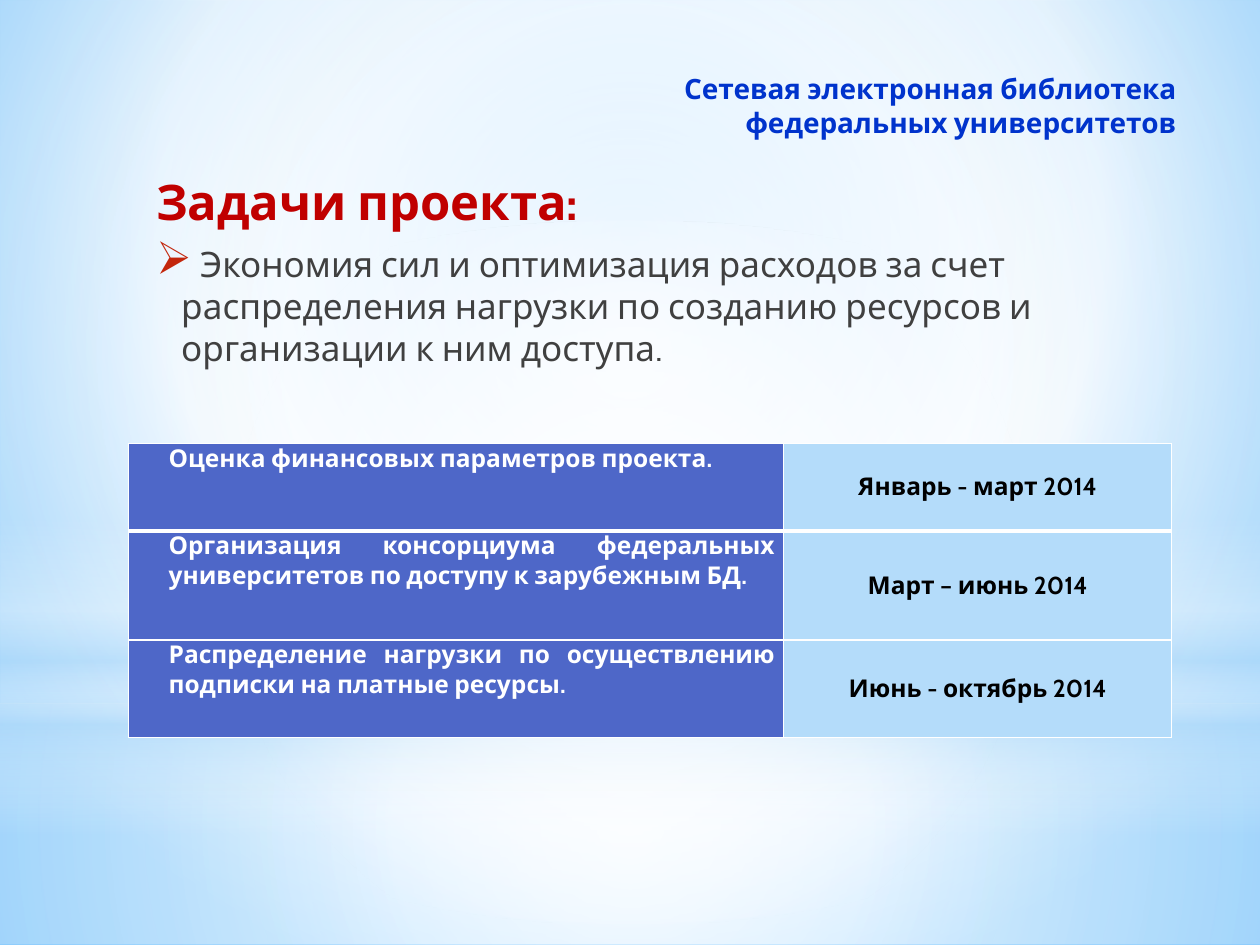
from dataclasses import dataclass, field
from typing import NamedTuple

from lxml.etree import SubElement
from pptx import Presentation
from pptx.dml.color import RGBColor
from pptx.enum.shapes import MSO_SHAPE as Shape
from pptx.enum.text import MSO_ANCHOR as Anchor, MSO_AUTO_SIZE as AutoSize, PP_ALIGN as Align
from pptx.oxml.ns import qn
from pptx.util import Pt


@dataclass(frozen=True)
class Theme:
    font: str = "Cabin"
    title: str = "0033CC"
    heading: str = "C00000"
    body: str = "404040"
    bullet: str = "C3260C"
    white: str = "FFFFFF"
    black: str = "000000"
    pale: str = "B4DCFA"
    task: str = "4E67C8"
    sky: str = "9ED5FF"
    deep_sky: str = "5BB9FF"
    title_size: int = 16
    heading_size: int = 28
    body_size: int = 20
    table_size: int = 14


THEME = Theme()


class Stop(NamedTuple):
    position: int
    color: str
    opacity: int = 100


@dataclass(frozen=True)
class Gradient:
    stops: list[Stop]
    focus: tuple = (50, 50, 50, 50)  # left, top, right, bottom
    angle: int | None = None


@dataclass(frozen=True)
class Panel:
    kind: Shape
    top: float
    height: float
    gradient: Gradient


@dataclass(frozen=True)
class TextStyle:
    size: int
    color: str
    bold: bool = True
    para: dict = field(default_factory=dict)
    indent: tuple = (0, 0)  # left margin, first line


class Stage(NamedTuple):
    task: str
    period: str
    height: float


WIDTH, HEIGHT = 720, 540
WHITE, PALE = THEME.white, THEME.pale

SKY = Gradient([Stop(0, THEME.sky), Stop(60, WHITE), Stop(100, THEME.deep_sky)], (20, 10, 20, 60))
PANELS = [
    Panel(Shape.RECTANGLE, 402, 138,
          Gradient([Stop(0, WHITE, 91), Stop(37, WHITE, 76), Stop(100, PALE, 79)])),
    Panel(Shape.RECTANGLE, 0, 402,
          Gradient([Stop(0, WHITE, 89), Stop(48, WHITE, 62), Stop(100, PALE, 79)])),
    Panel(Shape.RECTANGLE, 296.6, 180,
          Gradient([Stop(0, WHITE, 0), Stop(29, WHITE, 30), Stop(45, PALE, 40),
                    Stop(55, WHITE, 26), Stop(65, PALE, 60), Stop(100, WHITE, 0)], angle=90)),
    Panel(Shape.OVAL, 126, 402, Gradient([Stop(0, WHITE), Stop(56, WHITE, 0)])),
]

TITLE = TextStyle(THEME.title_size, THEME.title, para={"alignment": Align.RIGHT})
HEADING = TextStyle(THEME.heading_size, THEME.heading, indent=(3.6, 0),
                    para={"space_before": Pt(5.6), "space_after": Pt(3)})
GOAL = TextStyle(THEME.body_size, THEME.body, False, indent=(18, -14.4),
                 para={"space_before": Pt(4), "space_after": Pt(3)})
TASK = TextStyle(THEME.table_size, WHITE, para={"alignment": Align.JUSTIFY}, indent=(18, 0))
PERIOD = TextStyle(THEME.table_size, THEME.black, para={"alignment": Align.CENTER})

STAGES = [
    Stage("Оценка финансовых параметров проекта.", "Январь - март 2014", 50),
    Stage("Организация консорциума федеральных университетов по доступу к зарубежным БД.",
          "Март – июнь 2014", 62.5),
    Stage("Распределение нагрузки по осуществлению подписки на платные ресурсы.",
          "Июнь - октябрь 2014", 55.5),
]


def set_values(target, values: dict) -> None:
    for name, value in values.items():
        setattr(target, name, value)


def add_color(parent, color: str):
    return SubElement(parent, qn("a:srgbClr"), val=color)


def paint_gradient(owner, gradient: Gradient) -> None:
    """Fill a shape or a slide background with gradient stops."""
    owner.fill.gradient() if hasattr(owner, "fill") else owner.background.fill.gradient()
    element = next(owner.element.iter(qn("a:gradFill")))
    for child in list(element):
        element.remove(child)
    stop_list = SubElement(element, qn("a:gsLst"))
    for stop in gradient.stops:
        mark = SubElement(stop_list, qn("a:gs"), pos=str(stop.position * 1000))
        color = add_color(mark, stop.color)
        if stop.opacity < 100:
            SubElement(color, qn("a:alpha"), val=str(stop.opacity * 1000))
    if gradient.angle is not None:
        SubElement(element, qn("a:lin"), ang=str(gradient.angle * 60000), scaled="0")
    else:
        route = SubElement(element, qn("a:path"), path="circle")
        sides = {side: str(value * 1000) for side, value in zip("ltrb", gradient.focus)}
        SubElement(route, qn("a:fillToRect"), **sides)


def draw_panel(page, panel: Panel) -> None:
    shape = page.shapes.add_shape(panel.kind, 0, Pt(panel.top), Pt(WIDTH), Pt(panel.height))
    shape.shadow.inherit = False
    shape.line.fill.background()
    paint_gradient(shape, panel.gradient)


def write(para, text: str, style: TextStyle) -> None:
    para.text = text
    set_values(para, style.para)
    margin, first_line = style.indent
    properties = para._p.get_or_add_pPr()
    properties.set("marL", str(Pt(margin)))
    properties.set("indent", str(Pt(first_line)))
    for span in para.runs:
        set_values(span.font, {"name": THEME.font, "size": Pt(style.size), "bold": style.bold})
        span.font.color.rgb = RGBColor.from_string(style.color)


def add_bullet(para, symbol: str) -> None:
    properties = para._p.get_or_add_pPr()
    add_color(SubElement(properties, qn("a:buClr")), THEME.bullet)
    SubElement(properties, qn("a:buSzPct"), val="130000")
    SubElement(properties, qn("a:buChar"), char=symbol)


def draw_cell(cell, text: str, style: TextStyle, fill: str, anchor, borders: dict) -> None:
    set_values(cell, {"margin_left": Pt(5), "margin_right": Pt(5), "margin_top": 0,
                      "margin_bottom": 0, "vertical_anchor": anchor})
    write(cell.text_frame.paragraphs[0], text, style)
    properties = cell._tc.get_or_add_tcPr()
    for side, width in borders.items():
        line = SubElement(properties, qn(f"a:ln{side}"), w=str(Pt(width)))
        add_color(SubElement(line, qn("a:solidFill")), WHITE)
    cell.fill.solid()
    cell.fill.fore_color.rgb = RGBColor.from_string(fill)


def draw_schedule(page, stages: list[Stage]) -> None:
    widths = (374.4, 221.8)
    frame = page.shapes.add_table(len(stages), len(widths), Pt(73.4), Pt(253.4),
                                  Pt(sum(widths)), Pt(sum(stage.height for stage in stages)))
    table = frame.table
    set_values(table, {"first_row": False, "horz_banding": False})
    for column, width in zip(table.columns, widths):
        column.width = Pt(width)
    for index, stage in enumerate(stages):
        table.rows[index].height = Pt(stage.height)
        # A thick rule parts the first stage from the rest
        borders = {"L": 1, "R": 1, "T": 3 if index == 1 else 1, "B": 3 if index == 0 else 1}
        draw_cell(table.cell(index, 0), stage.task, TASK, THEME.task, Anchor.TOP, borders)
        draw_cell(table.cell(index, 1), stage.period, PERIOD, PALE, Anchor.MIDDLE, borders)


def main() -> None:
    deck = Presentation()
    set_values(deck, {"slide_width": Pt(WIDTH), "slide_height": Pt(HEIGHT)})
    page = deck.slides.add_slide(deck.slide_layouts[5])

    # Backdrop
    paint_gradient(page, SKY)
    for panel in PANELS:
        draw_panel(page, panel)

    # Title, raised above the backdrop
    title = page.shapes.title
    title.element.getparent().append(title.element)
    set_values(title, {"left": Pt(167), "top": Pt(37.4), "width": Pt(512.6), "height": Pt(51)})
    set_values(title.text_frame, {"word_wrap": True, "auto_size": AutoSize.NONE,
                                  "vertical_anchor": Anchor.TOP})
    write(title.text_frame.paragraphs[0],
          "Сетевая электронная библиотека\vфедеральных университетов", TITLE)

    # Project goals
    box = page.shapes.add_textbox(Pt(78.5), Pt(94.3), Pt(573.8), Pt(380))
    box.text_frame.word_wrap = True
    write(box.text_frame.paragraphs[0], "Задачи проекта:", HEADING)
    goal = box.text_frame.add_paragraph()
    write(goal, " Экономия сил и оптимизация расходов за счет распределения нагрузки "
                "по созданию ресурсов и организации к ним доступа.", GOAL)
    add_bullet(goal, "➢")

    # Schedule
    draw_schedule(page, STAGES)
    deck.save("out.pptx")


if __name__ == "__main__":
    main()
